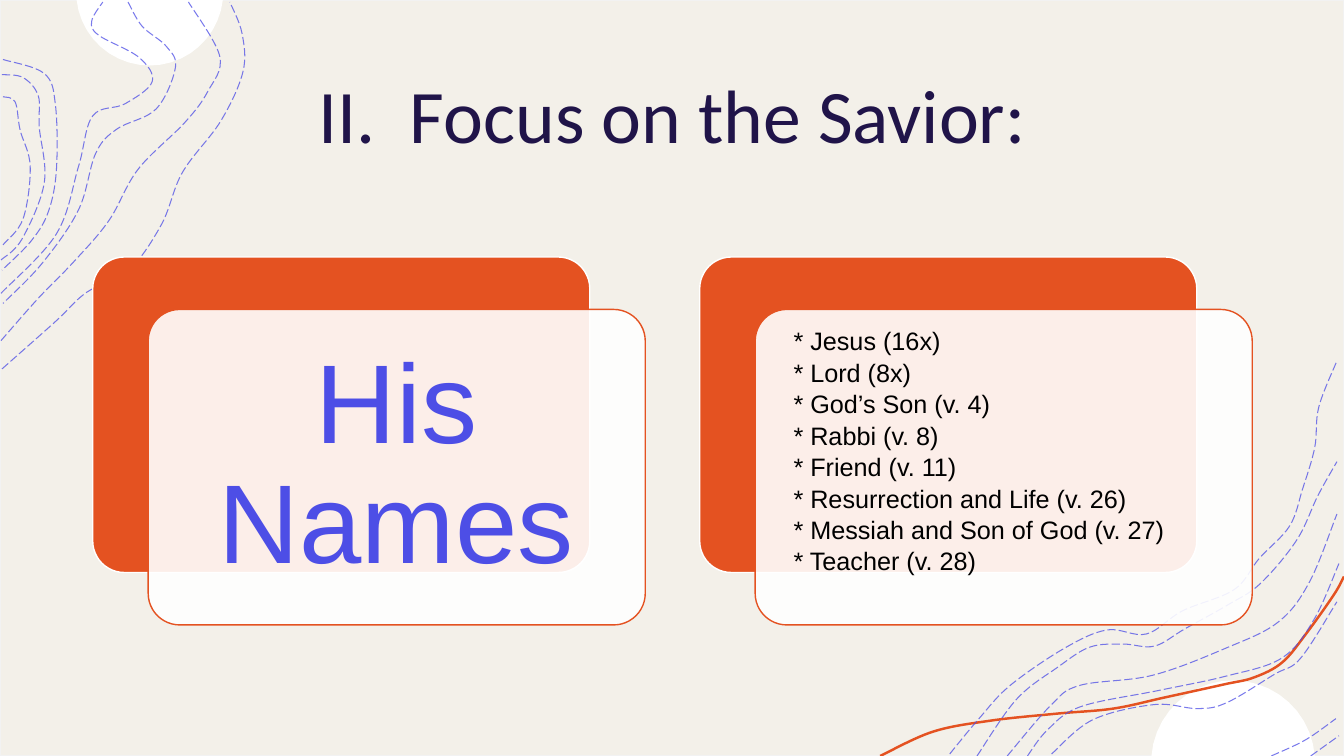
import math

from lxml import etree
from pptx import Presentation
from pptx.dml.color import RGBColor
from pptx.enum.dml import MSO_LINE
from pptx.enum.shapes import MSO_SHAPE
from pptx.enum.text import MSO_ANCHOR, MSO_AUTO_SIZE, PP_ALIGN
from pptx.oxml.ns import qn
from pptx.util import Inches, Pt

LONG_DASH = MSO_LINE.LONG_DASH
RECT, ROUND_RECT = MSO_SHAPE.RECTANGLE, MSO_SHAPE.ROUNDED_RECTANGLE
LEFT, CENTER = PP_ALIGN.LEFT, PP_ALIGN.CENTER
TOP, MIDDLE = MSO_ANCHOR.TOP, MSO_ANCHOR.MIDDLE
NO_FIT = MSO_AUTO_SIZE.NONE

# The slide is a grid of 1333 columns by 750 rows of square cells.
COLUMNS, ROWS = 1333, 750
CELL = Inches(0.01)

COLORS = {"paper": "F3F0E9", "edge": "F2F2F2", "white": "FFFFFF", "orange": "E45221",
          "violet": "4D4EE6", "navy": "201449", "black": "000000"}

NAMES = ["* Jesus (16x)", "* Lord (8x)", "* God’s Son (v. 4)", "* Rabbi (v. 8)",
         "* Friend (v. 11)", "* Resurrection and Life (v. 26)",
         "* Messiah and Son of God (v. 27)", "* Teacher (v. 28)"]

# Points (column, row) that each smooth curve runs through.
TOP_LEFT_CONTOURS = [
    [(2, 366), (55, 319), (86, 290), (127, 269), (160, 223), (181, 171), (219, 120),
     (241, 71), (240, 33), (228, 2)],
    [(1, 338), (38, 296), (73, 260), (108, 219), (137, 168), (183, 122), (206, 91),
     (218, 56), (187, 2)],
    [(127, 2), (141, 26), (165, 46), (174, 67), (155, 108), (116, 128), (95, 152),
     (78, 208), (42, 261), (3, 301)],
    [(1, 291), (56, 232), (78, 165), (92, 115), (124, 103), (151, 81), (138, 57),
     (98, 35), (91, 21), (102, 2)],
    [(3, 59), (44, 73), (55, 104), (56, 168), (48, 210), (31, 239), (2, 268)],
    [(2, 74), (23, 77), (38, 95), (39, 126), (44, 181), (22, 237), (1, 258)],
    [(3, 96), (15, 101), (20, 129), (30, 165), (23, 217), (3, 243)],
]
BOTTOM_RIGHT_CONTOURS = [
    [(942, 748), (971, 713), (1002, 680), (1056, 643), (1098, 625), (1137, 629),
     (1173, 606), (1224, 585), (1249, 554), (1279, 522), (1292, 485), (1304, 444),
     (1308, 404), (1326, 358)],
    [(969, 750), (1008, 694), (1049, 662), (1081, 642), (1114, 639), (1145, 641),
     (1175, 624), (1218, 600), (1250, 579), (1286, 536), (1307, 492), (1326, 458)],
    [(1300, 750), (1328, 730)],
    [(1261, 750), (1295, 734), (1325, 713)],
    [(1043, 748), (1084, 714), (1145, 699), (1188, 703), (1217, 697), (1264, 669),
     (1290, 653), (1326, 597)],
    [(1019, 750), (1039, 724), (1072, 701), (1149, 685), (1215, 671), (1271, 653),
     (1303, 615), (1328, 559)],
    [(999, 750), (1042, 700), (1071, 680), (1143, 670), (1216, 643), (1268, 617),
     (1299, 577), (1326, 510)],
]
RIBBON = [(873, 750), (925, 726), (982, 715), (1048, 708), (1104, 703), (1155, 692),
          (1214, 679), (1244, 672), (1272, 657), (1296, 628), (1323, 590), (1333, 572)]


def cells(*counts):
    return [count * CELL for count in counts]


def set_alpha(paint, percent):
    """Make a solid fill or line partly transparent."""
    color = paint._xPr.find(qn("a:solidFill"))[0]
    etree.SubElement(color, qn("a:alpha")).set("val", str(percent * 1000))


def paint_shape(shape, fill=None, line=None, width=1):
    shape.shadow.inherit = False
    for paint, color in ((shape.fill, fill), (shape.line.fill, line)):
        if color:
            paint.solid()
            paint.fore_color.rgb = RGBColor.from_string(COLORS[color])
        else:
            paint.background()
    if line:
        shape.line.width = Pt(width)


def add_outline(shapes, points, close):
    (x, y), *others = [cells(*point) for point in points]
    builder = shapes.build_freeform(x, y)
    builder.add_line_segments(others, close=close)
    return builder.convert_to_shape()


def bend(outline):
    """Turn the straight segments of an open outline into Bézier curves with shared tangents."""
    knots = [(int(knot.get("x")), int(knot.get("y"))) for knot in outline._element.iter(qn("a:pt"))]
    padded = [knots[0], *knots, knots[-1]]
    segments = list(outline._element.iter(qn("a:lnTo")))
    for segment, before, start, end, after in zip(segments, padded, padded[1:], padded[2:],
                                                  padded[3:]):
        leave = [s + (e - b) / 6 for b, s, e in zip(before, start, end)]
        arrive = [e - (a - s) / 6 for s, e, a in zip(start, end, after)]
        curve = etree.Element(qn("a:cubicBezTo"))
        for x, y in (leave, arrive, end):
            etree.SubElement(curve, qn("a:pt"), x=str(round(x)), y=str(round(y)))
        segment.getparent().replace(segment, curve)


def add_curve(shapes, points, color, width):
    curve = add_outline(shapes, points, False)
    bend(curve)
    paint_shape(curve, line=color, width=width)
    return curve


def add_contours(page, contours):
    group = page.shapes.add_group_shape()
    for points in contours:
        contour = add_curve(group.shapes, points, "violet", 0.75)
        contour.line.dash_style = LONG_DASH
        set_alpha(contour.line.fill, 75)


def add_cap(page, middle, edge, half_width, height):
    """Add a white circle segment whose flat side lies on a slide edge; a negative height rises."""
    radius = math.copysign((half_width ** 2 + height ** 2) / (2 * abs(height)), height)
    center = edge + height - radius
    reach = math.asin(half_width / abs(radius))
    angles = [reach * step / 10 for step in range(-10, 11)]
    points = [(middle + abs(radius) * math.sin(angle), center + radius * math.cos(angle))
              for angle in angles]
    paint_shape(add_outline(page.shapes, points, True), fill="white")


def add_card(shapes, left, top, fill, line):
    card = shapes.add_shape(ROUND_RECT, *cells(left, top, 493, 313))
    card.adjustments[0] = 0.1
    paint_shape(card, fill, line)
    return card


def write(box, place, lines, size, font, color, align, anchor, inset=(10, 5), **spacing):
    """Place a text box or placeholder and fill it with unbulleted paragraphs."""
    box.left, box.top, box.width, box.height = cells(*place)
    side, end = cells(*inset)
    frame = box.text_frame
    frame.text = "\n".join(lines)
    for name, value in {"word_wrap": True, "auto_size": NO_FIT, "vertical_anchor": anchor,
                        "margin_left": side, "margin_right": side,
                        "margin_top": end, "margin_bottom": end}.items():
        setattr(frame, name, value)
    for para in frame.paragraphs:
        for name, value in {"alignment": align, "space_before": Pt(0), **spacing}.items():
            setattr(para, name, value)
        properties = para._p.get_or_add_pPr()
        properties.set("marL", "0")
        properties.set("indent", "0")
        etree.SubElement(properties, qn("a:buNone"))
        for span in para.runs:
            span.font.size, span.font.name = Pt(size), font
            span.font.color.rgb = RGBColor.from_string(COLORS[color])


def bring_to_front(box):
    box._element.getparent().append(box._element)


def main():
    deck = Presentation()
    deck.slide_width, deck.slide_height = cells(COLUMNS, ROWS)
    page = deck.slides.add_slide(deck.slide_layouts[1])
    title, body = page.placeholders

    paper = page.shapes.add_shape(RECT, *cells(0, 0, COLUMNS, ROWS))
    paint_shape(paper, "paper", "edge")
    add_cap(page, 148.5, 0, 72.5, 65)
    add_cap(page, 1223, ROWS, 81, -75)
    add_curve(page.shapes, RIBBON, "orange", 1.75)
    add_contours(page, TOP_LEFT_CONTOURS)
    add_contours(page, BOTTOM_RIGHT_CONTOURS)

    bring_to_front(title)
    write(title, (92, 40, 1150, 145), ["II.  Focus on the Savior:"], 54, "Calibri", "navy",
          CENTER, MIDDLE)

    cards = page.shapes.add_group_shape().shapes
    for left in (92, 694):
        add_card(cards, left, 255, "orange", "white")
        set_alpha(add_card(cards, left + 55, 307, "white", "orange").fill, 90)
    heading_place = (156, 316, 474, 295)
    heading = cards.add_textbox(*cells(*heading_place))
    write(heading, heading_place, ["His Names"], 80, "Arial", "violet", CENTER, MIDDLE,
          inset=(33, 33), line_spacing=0.9)

    bring_to_front(body)
    write(body, (777, 317, 403, 283), NAMES, 18, "Arial", "black", LEFT, TOP, line_spacing=1.04)
    deck.save("out.pptx")


if __name__ == "__main__":
    main()
